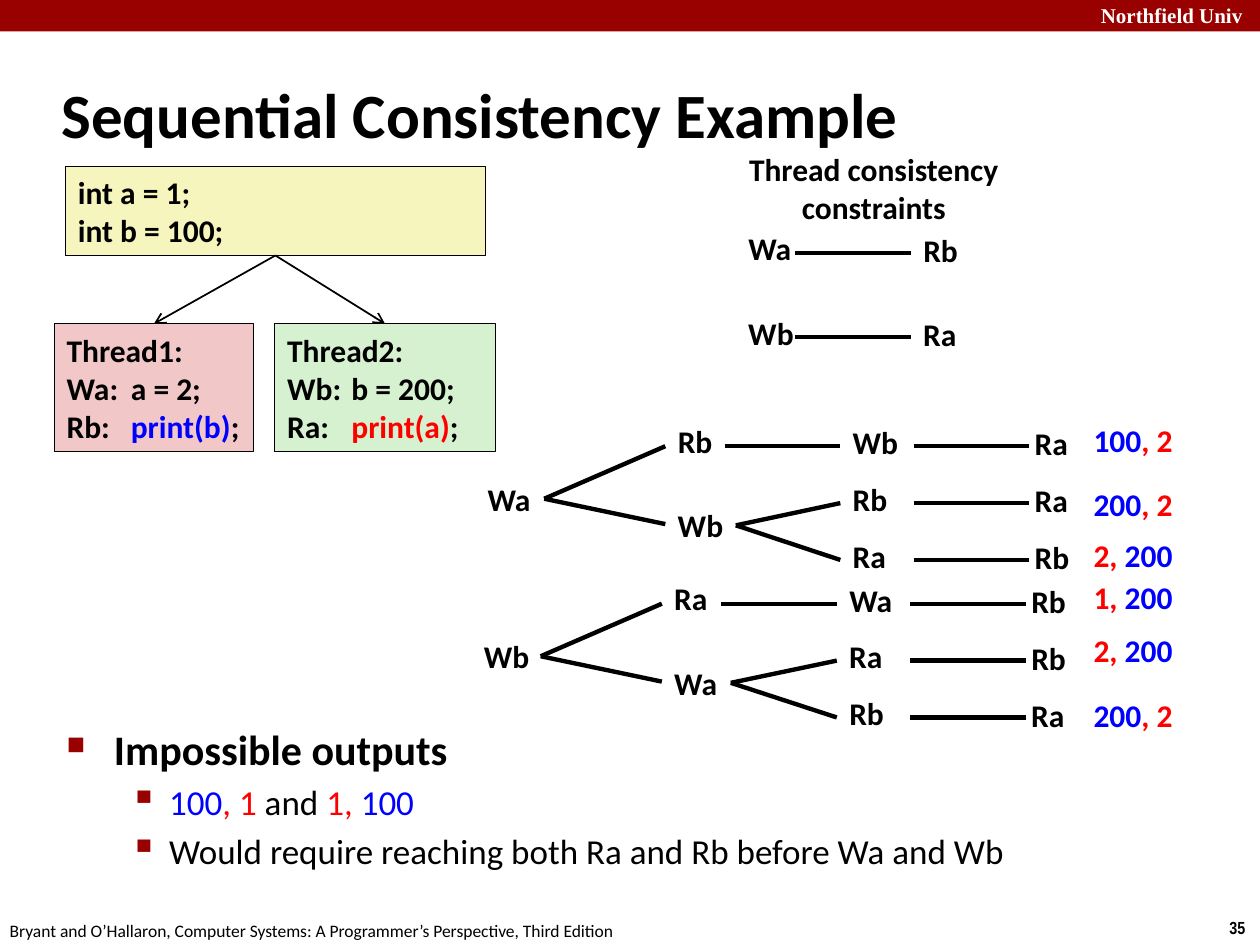
from lxml.etree import SubElement
from pptx import Presentation
from pptx.dml.color import RGBColor
from pptx.enum.shapes import MSO_CONNECTOR, MSO_SHAPE
from pptx.enum.text import MSO_ANCHOR, MSO_AUTO_SIZE, PP_ALIGN
from pptx.oxml.ns import qn
from pptx.util import Pt

BLACK, WHITE, RED, BLUE, MAROON = "000000", "FFFFFF", "FF0000", "0000FF", "990000"
LABEL_WIDTHS = {"Wa": 39.6, "Wb": 41, "Ra": 33.8, "Rb": 34.5}
LABEL_H = 29
ROW_STEP = 32.5


def rgb(value):
    return RGBColor.from_string(value)


def add_runs(p, runs, size=18, bold=True, font="Calibri"):
    for text, color in runs:
        r = p.add_run()
        r.text = text
        r.font.size = Pt(size)
        r.font.bold = bold
        r.font.name = font
        r.font.color.rgb = rgb(color)


def fill_text(tf, paragraphs, align=PP_ALIGN.LEFT, **style):
    for i, runs in enumerate(paragraphs):
        p = tf.paragraphs[0] if i == 0 else tf.add_paragraph()
        p.alignment = align
        add_runs(p, runs, **style)


def add_text(s, x, y, w, h, paragraphs, wrap=False, **style):
    sp = s.shapes.add_textbox(Pt(x), Pt(y), Pt(w), Pt(h))
    tf = sp.text_frame
    tf.word_wrap = wrap
    fill_text(tf, paragraphs, **style)
    return sp


def add_box(s, x, y, w, h, fill, paragraphs=(), line=BLACK, tab=None):
    sp = s.shapes.add_shape(MSO_SHAPE.RECTANGLE, Pt(x), Pt(y), Pt(w), Pt(h))
    sp.shadow.inherit = False
    sp.fill.solid()
    sp.fill.fore_color.rgb = rgb(fill)
    if line:
        sp.line.color.rgb = rgb(line)
        sp.line.width = Pt(0.75)
    else:
        sp.line.fill.background()
    tf = sp.text_frame
    tf.vertical_anchor = MSO_ANCHOR.MIDDLE
    fill_text(tf, paragraphs)
    if tab:
        for p in tf.paragraphs:
            tabs = SubElement(p._p.get_or_add_pPr(), qn("a:tabLst"))
            SubElement(tabs, qn("a:tab"), pos=str(Pt(tab)), algn="l")
    return sp


def add_line(s, x1, y1, x2, y2, width=2.5):
    cn = s.shapes.add_connector(MSO_CONNECTOR.STRAIGHT, Pt(x1), Pt(y1), Pt(x2), Pt(y2))
    cn.line.color.rgb = rgb(BLACK)
    cn.line.width = Pt(width)
    SubElement(cn._element.spPr, qn("a:effectLst"))
    return cn


def add_arrow(s, source, target):
    cn = add_line(s, 0, 0, 1, 1, width=1)
    cn.begin_connect(source, 2)
    cn.end_connect(target, 0)
    SubElement(cn.line._get_or_add_ln(), qn("a:tailEnd"), type="arrow")


def add_label(s, x, y, name):
    add_text(s, x, y, LABEL_WIDTHS[name], LABEL_H, [[(name, BLACK)]])


def add_bullet(p, char, percent, left, hanging):
    pPr = p._p.get_or_add_pPr()
    pPr.set("marL", str(Pt(left)))
    pPr.set("indent", str(-Pt(hanging)))
    color = SubElement(pPr, qn("a:buClr"))
    SubElement(color, qn("a:srgbClr"), val=MAROON)
    SubElement(pPr, qn("a:buSzPct"), val=str(percent * 1000))
    SubElement(pPr, qn("a:buChar"), char=char)


def add_tree(s, x, y, split_x, root, children, third, fourth):
    add_label(s, x, y + 33, root)
    for name, label_y, line_y in zip(children, (0, 48.2), (17.5, 62)):
        add_label(s, x + 108.7, y + label_y, name)
        add_line(s, x + 39.5, y + 47.5, x + 108.7, y + line_y)
    add_line(s, x + 142.5, y + 17.5, x + 208.7, y + 17.5)
    for i, (left, right) in enumerate(zip(third, fourth)):
        row_y = y + i * ROW_STEP
        add_label(s, x + 208.7, row_y + 0.7, left)
        add_label(s, x + 312.7, row_y + 1.4, right)
        add_line(s, x + 250.7, row_y + 17.5, x + 316.7, row_y + 17.5)
        if i:
            add_line(s, split_x, y + 62.7, x + 208.7, row_y + 17.5)


def add_frame(s):
    add_box(s, 0, 0, 720, 18, MAROON, line=None)
    add_text(s, 622, -2, 103, 21.6, [[("Northfield Univ", WHITE)]],
             wrap=True, size=12, font="Times New Roman")
    add_text(s, 695.5, 520.5, 24.5, 19.4, [[("35", BLACK)]], size=10, font="Arial Narrow")
    citation = "Bryant and O’Hallaron, Computer Systems: A Programmer’s Perspective, Third Edition"
    add_text(s, -1.5, 522, 366, 19.4, [[(citation, BLACK)]], size=10, bold=False)
    title = add_text(s, 28, 34.5, 598, 60, [[("Sequential Consistency Example", BLACK)]],
                     wrap=True, size=36)
    title.text_frame.vertical_anchor = MSO_ANCHOR.MIDDLE


def add_program(s):
    shared = add_box(s, 37.4, 95, 240, 51, "F6F5BD",
                     [[("int a = 1;", BLACK)], [("int b = 100;", BLACK)]])
    threads = (
        (31, 114, "F1C7C7", "Thread1:", "Wa:\ta = 2;", "Rb: \t", "print(b)", BLUE),
        (157, 126, "D5F1CF", "Thread2:", "Wb:\tb = 200;", "Ra:\t", "print(a)", RED),
    )
    for x, w, fill, name, write, read, call, color in threads:
        thread = add_box(s, x, 185, w, 73, fill, [
            [(name, BLACK)], [(write, BLACK)],
            [(read, BLACK), (call, color), (";", BLACK)]], tab=36.7)
        add_arrow(s, shared, thread)


def add_constraints(s):
    add_text(s, 420.5, 82, 157.7, 51, [[("Thread consistency", BLACK)], [("constraints", BLACK)]],
             align=PP_ALIGN.CENTER)
    for y, first, second in ((127.5, "Wa", "Rb"), (175.7, "Wb", "Ra")):
        add_label(s, 420.5, y, first)
        add_label(s, 520.5, y + 0.7, second)
        add_line(s, 454.5, y + 17, 520.5, y + 17)


def add_outputs(s):
    outputs = (
        (237, "100", ", 2"), (273.6, "200", ", 2"), (303, "2, ", "200"),
        (327, "1, ", "200"), (357, "2, ", "200"), (394, "200", ", 2"),
    )
    for y, *parts in outputs:
        runs = [(part, RED if "," in part else BLUE) for part in parts]
        add_text(s, 617.8, y, 60.5, LABEL_H, [runs])


def add_conclusion(s):
    sp = s.shapes.add_textbox(Pt(31), Pt(409.7), Pt(622), Pt(60.5))
    tf = sp.text_frame
    tf.word_wrap = True
    tf.auto_size = MSO_AUTO_SIZE.NONE
    lines = (
        (0, [("Impossible outputs", BLACK)]),
        (1, [("100", BLUE), (", 1 ", RED), ("and ", BLACK), ("1, ", RED), ("100", BLUE)]),
        (1, [("Would require reaching both Ra and Rb before Wa and Wb", BLACK)]),
    )
    levels = ((24, True, ("■", 60, 27, 27)), (20, False, ("▪", 110, 58.5, 22.5)))
    for i, (level, runs) in enumerate(lines):
        size, bold, bullet = levels[level]
        p = tf.add_paragraph() if i else tf.paragraphs[0]
        p.level = level
        p.space_before = Pt(size * 0.2)
        add_bullet(p, *bullet)
        add_runs(p, runs, size=size, bold=bold)


def main():
    prs = Presentation()
    prs.slide_width, prs.slide_height = Pt(720), Pt(540)
    s = prs.slides.add_slide(prs.slide_layouts[6])
    add_frame(s)
    add_conclusion(s)
    add_tree(s, 271.5, 237.5, 420.5, "Wa", ("Rb", "Wb"), ("Wb", "Rb", "Ra"), ("Ra", "Ra", "Rb"))
    add_tree(s, 269.5, 327.5, 417.6, "Wb", ("Ra", "Wa"), ("Wa", "Ra", "Rb"), ("Rb", "Rb", "Ra"))
    add_outputs(s)
    add_constraints(s)
    add_program(s)
    prs.save("out.pptx")


if __name__ == "__main__":
    main()
